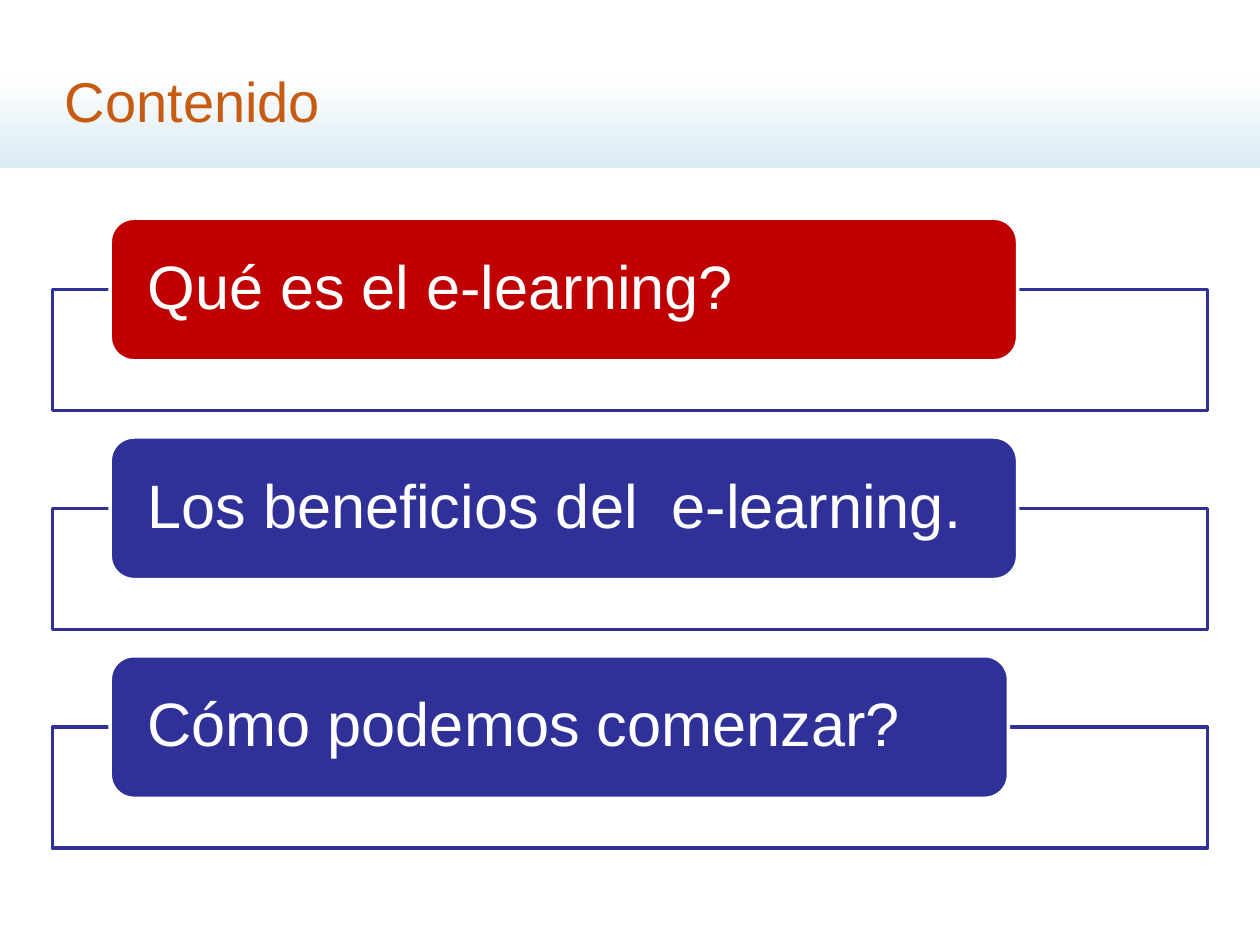
import pptx
import pptx.util
import pptx.oxml.ns
import pptx.dml.color
import pptx.enum.shapes
import pptx.enum.text
from lxml import etree

Pt = pptx.util.Pt
SHAPE = pptx.enum.shapes.MSO_SHAPE
COLORS = {"white": "FFFFFF", "sky": "DAEBF3", "title": "C75B12",
          "blue": "303099", "red": "C00000"}


def rgb(name):
    """Return the named colour."""
    return pptx.dml.color.RGBColor.from_string(COLORS[name])


def add_box(s, kind, x, y, w, h, fill, line):
    """Add a shape with a solid fill and a 2 pt outline."""
    sp = s.shapes.add_shape(kind, Pt(x), Pt(y), Pt(w), Pt(h))
    sp.shadow.inherit = False
    sp.fill.solid()
    sp.fill.fore_color.rgb = rgb(fill)
    sp.line.color.rgb = rgb(line)
    sp.line.width = Pt(2)
    return sp


def set_text(sp, text, size, color, inset_x, inset_y):
    """Write one left-aligned, vertically centred paragraph."""
    tf = sp.text_frame
    tf.word_wrap = True
    tf.vertical_anchor = pptx.enum.text.MSO_ANCHOR.MIDDLE
    tf.margin_left = tf.margin_right = Pt(inset_x)
    tf.margin_top = tf.margin_bottom = Pt(inset_y)
    p = tf.paragraphs[0]
    p.text = text
    p.alignment = pptx.enum.text.PP_ALIGN.LEFT
    r = p.runs[0]
    r.font.name = "Arial"
    r.font.size = Pt(size)
    r.font.color.rgb = rgb(color)
    return p


def add_header(s, x, y, w, h, title):
    """Draw the gradient band and the title over it."""
    band = s.shapes.add_shape(SHAPE.RECTANGLE, Pt(x), Pt(y + 42), Pt(w), Pt(h - 42))
    band.shadow.inherit = False
    band.line.fill.background()
    band.fill.gradient()
    band.fill.gradient_angle = 270
    for stop, position, color in zip(band.fill.gradient_stops, (0, 1), ("white", "sky")):
        stop.position = position
        stop.color.rgb = rgb(color)
    sp = s.shapes.add_textbox(Pt(x + 30), Pt(y + 18), Pt(w - 60), Pt(h - 18))
    set_text(sp, title, 32, "title", 7.2, 3.6)


def add_topic(s, x, y, w, h, text, color, label_w):
    """Draw an outlined frame with a rounded label across its top edge."""
    label_h = 81.5
    frame_y = label_h / 2
    frame = add_box(s, SHAPE.RECTANGLE, x, y + frame_y, w, h - frame_y, "white", "blue")
    clr = frame.fill._xPr.find(".//" + pptx.oxml.ns.qn("a:srgbClr"))
    etree.SubElement(clr, pptx.oxml.ns.qn("a:alpha"), val="90000")
    label = add_box(s, SHAPE.ROUNDED_RECTANGLE, x + 33, y, label_w, label_h, color, "white")
    label.adjustments[0] = 0.167
    p = set_text(label, text, 35, "white", 17.3, 0)
    p.line_spacing = 0.9
    p.space_after = Pt(12.2)


def main():
    """Build the contents slide."""
    prs = pptx.Presentation()
    prs.slide_width, prs.slide_height = Pt(720), Pt(540)
    s = prs.slides.add_slide(prs.slide_layouts[6])
    add_header(s, 0, 0, 720, 96, "Contenido")
    topics = [("Qué es el e-learning?", "red", 518.5),
              ("Los beneficios del  e-learning.", "blue", 518.5),
              ("Cómo podemos comenzar?", "blue", 513.3)]
    for i, (text, color, label_w) in enumerate(topics):
        add_topic(s, 30, 124.7 + 125 * i, 660, 110, text, color, label_w)
    prs.save("out.pptx")


if __name__ == "__main__":
    main()
